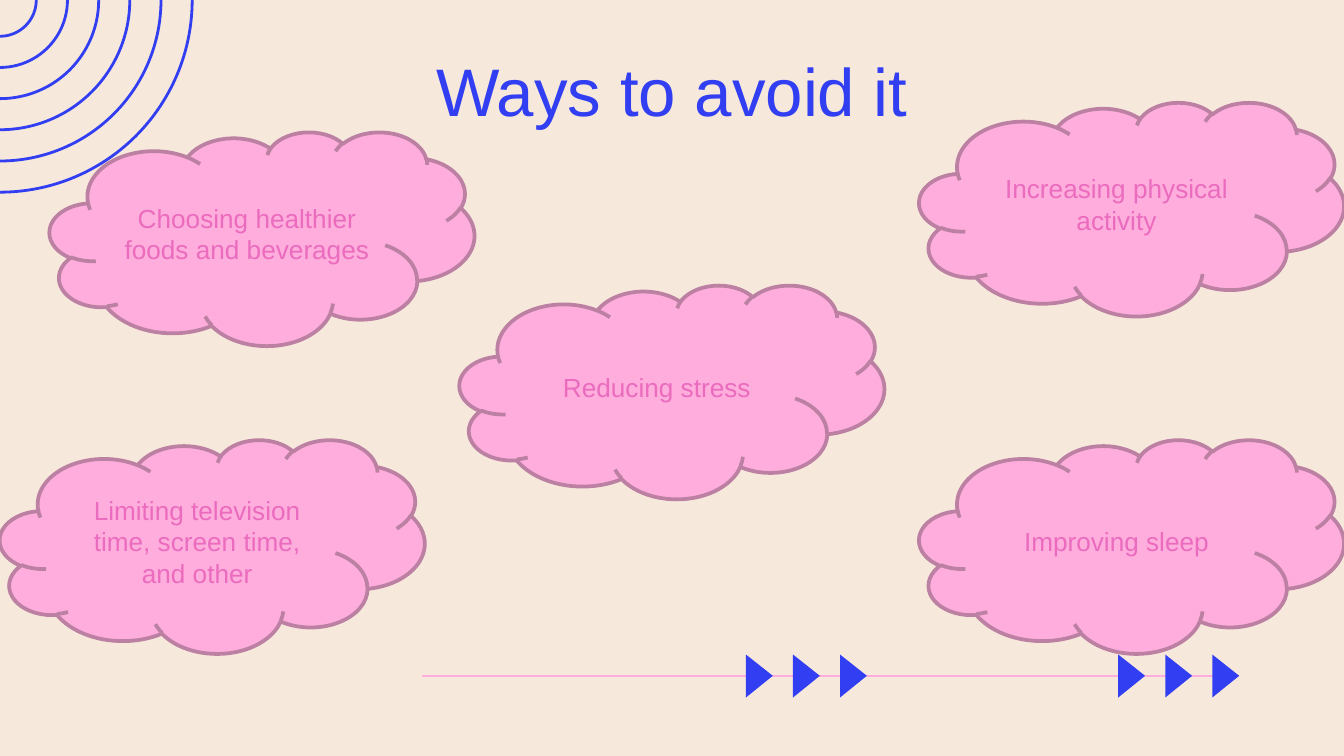
from dataclasses import dataclass

from lxml.etree import SubElement
from pptx import Presentation
from pptx.dml.color import RGBColor
from pptx.enum.shapes import MSO_CONNECTOR, MSO_SHAPE
from pptx.enum.text import MSO_ANCHOR, PP_ALIGN
from pptx.oxml.ns import qn
from pptx.util import Inches, Pt


@dataclass(frozen=True)
class Theme:
    background: RGBColor = RGBColor.from_string("F7E8DC")
    blue: RGBColor = RGBColor.from_string("313EF2")
    pink: RGBColor = RGBColor.from_string("FEADDD")
    cloud_outline: RGBColor = RGBColor.from_string("BC80A3")
    cloud_text: RGBColor = RGBColor.from_string("EB6BBE")
    font: str = "Arial"
    title_size: Pt = Pt(36)
    cloud_size: Pt = Pt(14)


theme = Theme()


def write_text(text_frame, text, size, color):
    text_frame.word_wrap = True
    paragraph = text_frame.paragraphs[0]
    paragraph.alignment = PP_ALIGN.CENTER
    run = paragraph.add_run()
    run.text = text
    run.font.name = theme.font
    run.font.size = size
    run.font.color.rgb = color


def add_plain_shape(kind, left, top, width, height, fill=None, line=None, line_width=1.5):
    shape = slide.shapes.add_shape(
        kind, Inches(left), Inches(top), Inches(width), Inches(height)
    )
    shape.shadow.inherit = False
    if fill is None:
        shape.fill.background()
    else:
        shape.fill.solid()
        shape.fill.fore_color.rgb = fill
    if line is None:
        shape.line.fill.background()
    else:
        shape.line.color.rgb = line
        shape.line.width = Pt(line_width)
    return shape


# Widescreen slide, 16 to 9
presentation = Presentation()
presentation.slide_width = Inches(10)
presentation.slide_height = Inches(10 * 9 / 16)
slide = presentation.slides.add_slide(presentation.slide_layouts[5])
slide.background.fill.solid()
slide.background.fill.fore_color.rgb = theme.background

# Concentric rings around the top left corner
inner_radius, outer_radius, ring_count = 0.27, 1.43, 6
ring_step = (outer_radius - inner_radius) / (ring_count - 1)
for index in reversed(range(ring_count)):
    radius = inner_radius + index * ring_step
    add_plain_shape(
        MSO_SHAPE.OVAL, -radius, -radius, 2 * radius, 2 * radius, line=theme.blue
    )

# Track line with two sets of three arrowheads
track_y = 5.03
track = slide.shapes.add_connector(
    MSO_CONNECTOR.STRAIGHT, Inches(3.14), Inches(track_y), Inches(9.22), Inches(track_y)
)
track.line.color.rgb = theme.pink
track.line.width = Pt(1.5)
SubElement(track.element.spPr, qn("a:effectLst"))

for first_left in (8.26, 5.49):
    for index in range(3):
        arrowhead = add_plain_shape(
            MSO_SHAPE.ISOSCELES_TRIANGLE,
            first_left + index * 0.35, track_y - 0.1, 0.32, 0.2, fill=theme.blue,
        )
        arrowhead.adjustments[0] = 0.495
        arrowhead.rotation = 90

# Title
title = slide.shapes.title
title.left, title.top = Inches(0.78), Inches(0.27)
title.width, title.height = Inches(8.44), Inches(0.52)
title_frame = title.text_frame
title_frame.vertical_anchor = MSO_ANCHOR.TOP
title_frame.margin_left = title_frame.margin_right = Inches(0.1)
title_frame.margin_top = title_frame.margin_bottom = Inches(0.1)
write_text(title_frame, "Ways to avoid it", theme.title_size, theme.blue)

# Clouds with the advice
clouds = [
    (0.37, 0.98, "Choosing healthier foods and beverages"),
    (0, 3.27, "Limiting television time, screen time, and other"),
    (6.84, 0.76, "Increasing physical activity"),
    (6.84, 3.27, "Improving sleep"),
    (3.42, 2.12, "Reducing stress"),
]
for left, top, advice in clouds:
    cloud = add_plain_shape(
        MSO_SHAPE.CLOUD, left, top, 3.16, 1.59,
        fill=theme.pink, line=theme.cloud_outline, line_width=2,
    )
    cloud.text_frame.vertical_anchor = MSO_ANCHOR.MIDDLE
    write_text(cloud.text_frame, advice, theme.cloud_size, theme.cloud_text)

presentation.save("out.pptx")
